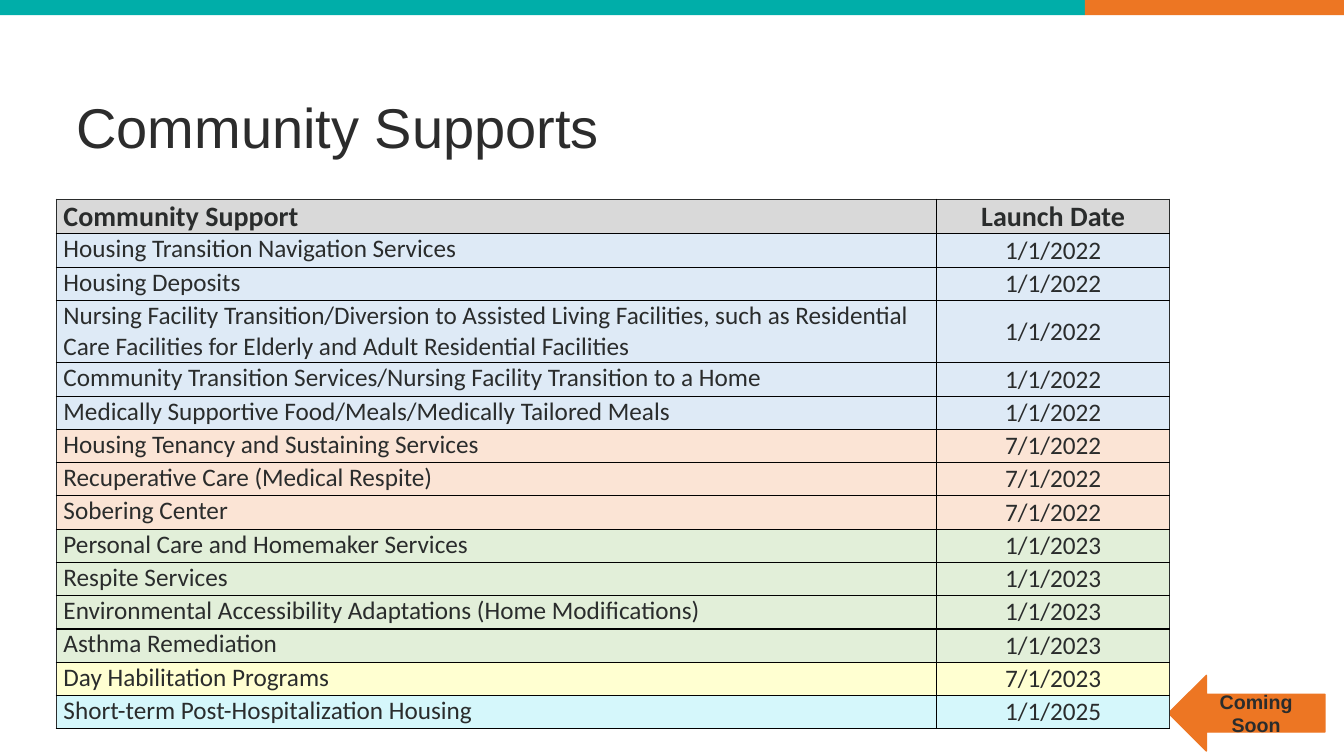
"""Builds the Community Supports launch date slide."""
import pptx
import pptx.util
import pptx.dml.color
import pptx.enum.shapes
import pptx.enum.text
import pptx.oxml
import pptx.oxml.ns
from pptx.util import Inches

RGBColor = pptx.dml.color.RGBColor
MSO_SHAPE = pptx.enum.shapes.MSO_SHAPE
PP_ALIGN = pptx.enum.text.PP_ALIGN
MSO_ANCHOR = pptx.enum.text.MSO_ANCHOR

TEAL = RGBColor(0x00, 0xAE, 0xA9)
ORANGE = RGBColor(0xED, 0x76, 0x23)
INK = RGBColor(0x2A, 0x2C, 0x2C)
TITLE_INK = RGBColor(0x2C, 0x2C, 0x2C)
BLACK = RGBColor(0x00, 0x00, 0x00)
GRAY = RGBColor(0xD9, 0xD9, 0xD9)
BLUE = RGBColor(0xDE, 0xEA, 0xF6)
PEACH = RGBColor(0xFB, 0xE4, 0xD5)
GREEN = RGBColor(0xE2, 0xEF, 0xD9)
YELLOW = RGBColor(0xFF, 0xFF, 0xD1)
CYAN = RGBColor(0xD5, 0xF7, 0xFB)

HEADER = ("Community Support", "Launch Date")
LAUNCHES = [
    ("1/1/2022", BLUE, [
        "Housing Transition Navigation Services",
        "Housing Deposits",
        "Nursing Facility Transition/Diversion to Assisted Living Facilities, "
        "such as Residential Care Facilities for Elderly and Adult Residential Facilities",
        "Community Transition Services/Nursing Facility Transition to a Home",
        "Medically Supportive Food/Meals/Medically Tailored Meals"]),
    ("7/1/2022", PEACH, [
        "Housing Tenancy and Sustaining Services",
        "Recuperative Care (Medical Respite)",
        "Sobering Center"]),
    ("1/1/2023", GREEN, [
        "Personal Care and Homemaker Services",
        "Respite Services",
        "Environmental Accessibility Adaptations (Home Modifications)",
        "Asthma Remediation"]),
    ("7/1/2023", YELLOW, ["Day Habilitation Programs"]),
    ("1/1/2025", CYAN, ["Short-term Post-Hospitalization Housing"]),
]


class SlideBuilder:
    """Holds the current slide and its text style."""

    def __init__(self, s, heading_font="Arial", table_font="Calibri"):
        self.s = s
        self.heading_font = heading_font
        self.table_font = table_font

    def set_text(self, tf, text, font, size, color, bold=False, align=PP_ALIGN.LEFT):
        """Put one styled paragraph into a text frame."""
        tf.word_wrap = True
        p = tf.paragraphs[0]
        p.text = text
        p.alignment = align
        p.font.name = font
        p.font.size = pptx.util.Pt(size)
        p.font.bold = bold
        p.font.color.rgb = color

    def shape(self, kind, left, top, width, height, color):
        """Add a flat filled shape."""
        sp = self.s.shapes.add_shape(kind, Inches(left), Inches(top),
                                     Inches(width), Inches(height))
        sp.shadow.inherit = False
        sp.fill.solid()
        sp.fill.fore_color.rgb = color
        sp.line.fill.background()
        return sp

    def arrow(self, text, left, top, width, height, color):
        """Add a labelled arrow pointing left."""
        sp = self.shape(MSO_SHAPE.LEFT_ARROW, left, top, width, height, color)
        sp.line.color.rgb = color
        sp.line.width = pptx.util.Pt(1)
        sp.text_frame.vertical_anchor = MSO_ANCHOR.MIDDLE
        self.set_text(sp.text_frame, text, self.heading_font, 14, INK, True, PP_ALIGN.CENTER)

    def title(self, text, left, top, width, height):
        """Add the slide title."""
        tf = self.s.shapes.add_textbox(Inches(left), Inches(top),
                                       Inches(width), Inches(height)).text_frame
        tf.vertical_anchor = MSO_ANCHOR.MIDDLE
        self.set_text(tf, text, self.heading_font, 40, TITLE_INK)

    def border(self, cell, side, heavy):
        """Draw one cell edge, heavy for the table outline."""
        color, width = (INK, 1.5) if heavy else (BLACK, 1)
        cell._tc.get_or_add_tcPr().append(pptx.oxml.parse_xml(
            f'<a:ln{side} {pptx.oxml.ns.nsdecls("a")} w="{pptx.util.Pt(width)}">'
            f'<a:solidFill><a:srgbClr val="{color}"/></a:solidFill></a:ln{side}>'))

    def table(self, rows, left, top, col_widths, row_heights):
        """Add a table from (texts, fill) rows, the first being the header."""
        table = self.s.shapes.add_table(
            len(rows), len(col_widths), Inches(left), Inches(top),
            Inches(sum(col_widths)), Inches(sum(row_heights))).table
        table.horz_banding = False
        for column, width in zip(table.columns, col_widths):
            column.width = Inches(width)
        for i, (texts, fill) in enumerate(rows):
            table.rows[i].height = Inches(row_heights[i])
            header = i == 0
            for j, text in enumerate(texts):
                cell = table.cell(i, j)
                cell.margin_left = cell.margin_right = Inches(0.07)
                cell.margin_top = cell.margin_bottom = 0
                is_date = j == 1
                if is_date and not header:
                    cell.vertical_anchor = MSO_ANCHOR.MIDDLE
                for side, heavy in (("L", not is_date), ("R", is_date),
                                    ("T", header), ("B", False)):
                    self.border(cell, side, heavy)
                cell.fill.solid()
                cell.fill.fore_color.rgb = fill
                self.set_text(cell.text_frame, text, self.table_font,
                              20 if header else 18, INK, header,
                              PP_ALIGN.CENTER if is_date else PP_ALIGN.LEFT)


def main():
    """Build and save the slide."""
    prs = pptx.Presentation()
    prs.slide_width, prs.slide_height = Inches(13.33), Inches(7.5)
    builder = SlideBuilder(prs.slides.add_slide(prs.slide_layouts[6]))
    builder.shape(MSO_SHAPE.RECTANGLE, 0, 0, 10.76, 0.15, TEAL)
    builder.shape(MSO_SHAPE.RECTANGLE, 10.76, 0, 2.57, 0.15, ORANGE)
    builder.arrow("Coming Soon", 11.59, 6.7, 1.55, 0.75, ORANGE)
    rows = [(HEADER, GRAY)]
    rows += [((name, date), fill) for date, fill, names in LAUNCHES for name in names]
    heights = [0.62 if len(texts[0]) > 80 else 0.33 for texts, _ in rows]
    builder.table(rows, 0.56, 1.98, [8.73, 2.31], heights)
    builder.title("Community Supports", 0.66, 0.53, 11.5, 1.45)
    prs.save("out.pptx")


if __name__ == "__main__":
    main()
